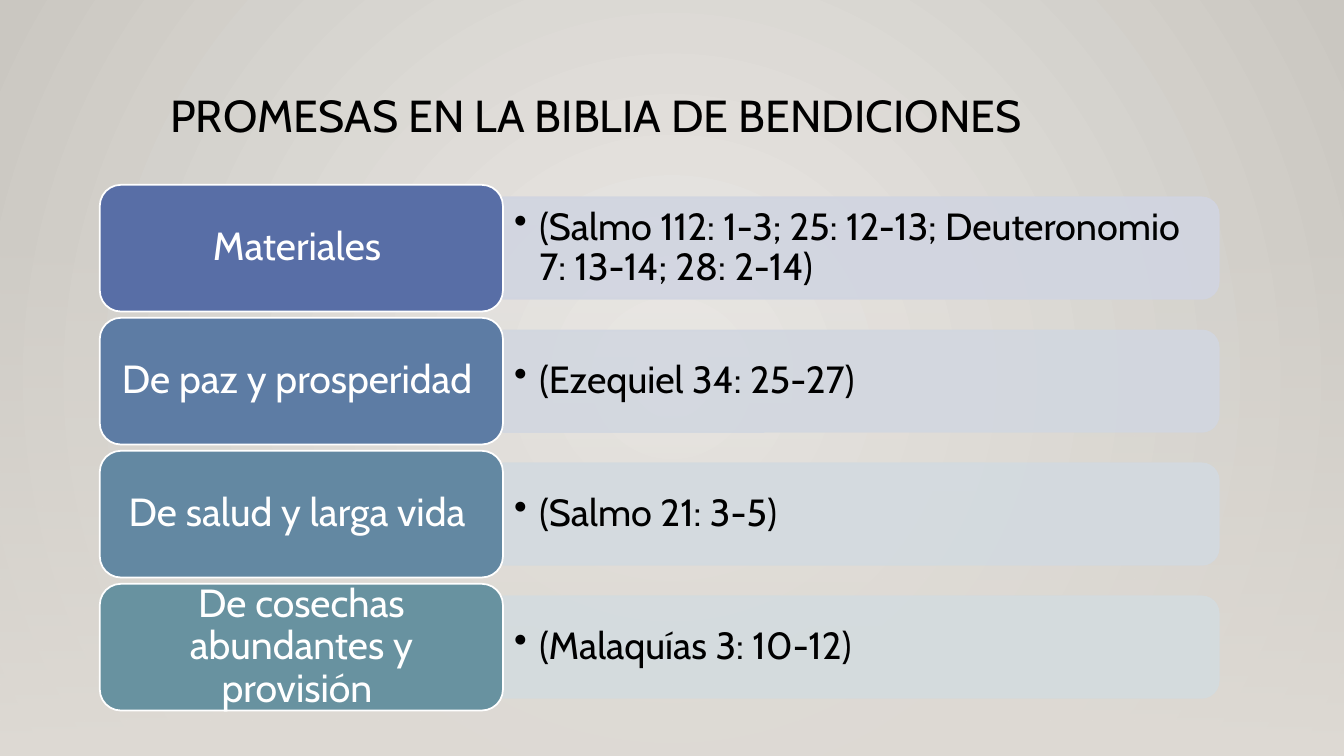
from dataclasses import dataclass

from lxml import etree
from pptx import Presentation
from pptx.dml.color import RGBColor
from pptx.enum.shapes import MSO_SHAPE
from pptx.enum.text import MSO_ANCHOR, MSO_AUTO_SIZE, PP_ALIGN
from pptx.oxml.ns import qn
from pptx.util import Pt

RECT, CARD, BAR = MSO_SHAPE.RECTANGLE, MSO_SHAPE.ROUNDED_RECTANGLE, MSO_SHAPE.ROUND_2_SAME_RECTANGLE
TOP, MIDDLE = MSO_ANCHOR.TOP, MSO_ANCHOR.MIDDLE
LEFT, CENTER = PP_ALIGN.LEFT, PP_ALIGN.CENTER
NO_FIT = MSO_AUTO_SIZE.NONE


@dataclass(frozen=True)
class Theme:
    """Colours, font and sizes of the slide."""
    font: str = "Cabin"
    ink: str = "000000"
    white: str = "FFFFFF"
    glow: str = "ECEAE7"
    edge: str = "CAC7C1"
    floor: str = "DFDBD5"
    title: float = 32
    label: float = 28
    verse: float = 27
    outline: float = 1.25


THEME = Theme()
WIDTH, HEIGHT = 960, 540
PROMISES = [
    ("Materiales ", "(Salmo 112: 1-3; 25: 12-13; Deuteronomio 7: 13-14; 28: 2-14)", "586EA6", "D1D5E1"),
    ("De paz y prosperidad ", "(Ezequiel 34: 25-27)", "5D7CA4", "D2D7E0"),
    ("De salud y larga vida ", "(Salmo 21: 3-5)", "6388A2", "D3DAE0"),
    ("De cosechas abundantes y provisión ", "(Malaquías 3: 10-12)", "6892A0", "D4DCDF"),
]


def apply(obj, **values):
    """Set each named value on the object."""
    for name, value in values.items():
        setattr(obj, name, value)


def set_alpha(color_element, percent):
    """Give a colour element an opacity."""
    etree.SubElement(color_element, qn("a:alpha"), val=str(percent * 1000))


def set_stops(fill, colors):
    """Make a gradient from the given end colours."""
    fill.gradient()
    for stop, color, position in zip(fill.gradient_stops, colors, (0, 1)):
        stop.color.rgb = RGBColor.from_string(color)
        stop.position = position


def add_panel(s, kind, box, fill, line):
    """Add a filled and outlined shape without a shadow."""
    sp = s.shapes.add_shape(kind, *map(Pt, box))
    sp.shadow.inherit = False
    sp.fill.solid()
    sp.fill.fore_color.rgb = RGBColor.from_string(fill)
    sp.line.color.rgb = RGBColor.from_string(line)
    sp.line.width = Pt(THEME.outline)
    return sp


def write(sp, text, size, color, align, anchor, inset, bullet=False):
    """Write one formatted paragraph into a shape."""
    tf = sp.text_frame
    side, end = map(Pt, inset)
    apply(tf, word_wrap=True, auto_size=NO_FIT, vertical_anchor=anchor,
          margin_left=side, margin_right=side, margin_top=end, margin_bottom=end)
    p = tf.paragraphs[0]
    r = p.add_run()
    r.text = text
    if bullet:
        pPr = p._p.get_or_add_pPr()
        pPr.set("marL", str(Pt(18)))
        pPr.set("indent", str(-Pt(18)))
        etree.SubElement(pPr, qn("a:buChar"), char="•")
        p.level = 1
    apply(p, alignment=align, line_spacing=0.9)
    apply(r.font, name=THEME.font, size=Pt(size))
    r.font.color.rgb = RGBColor.from_string(color)


def add_backdrop(s, box):
    """Paint the radial background and the floor that fades in over the box."""
    fill = s.background.fill
    set_stops(fill, (THEME.glow, THEME.edge))
    grad = s.element.find(".//" + qn("a:gradFill"))
    grad.remove(grad.find(qn("a:lin")))
    circle = etree.SubElement(grad, qn("a:path"), path="circle")
    etree.SubElement(circle, qn("a:fillToRect"), l="50000", t="50000", r="50000", b="50000")
    floor = s.shapes.add_shape(RECT, *map(Pt, box))
    floor.shadow.inherit = False
    floor.line.fill.background()
    set_stops(floor.fill, (THEME.floor, THEME.floor))
    floor.fill.gradient_angle = 270
    set_alpha(floor.element.spPr.find(".//" + qn("a:srgbClr")), 0)


def add_title(s, box, text):
    """Place and format the title placeholder."""
    sp = s.shapes.title
    for name, value in zip(("left", "top", "width", "height"), box):
        setattr(sp, name, Pt(value))
    write(sp, text, THEME.title, THEME.ink, LEFT, TOP, (7.2, 3.6))


def add_promise(s, box, label, verse, card_fill, bar_fill):
    """Add a label card and the verse bar to its right."""
    x, y, w, h = box
    card_w, bar_h, pad = 288, 72.5, 3.5
    bar_x, bar_w, middle = x + card_w, w - card_w, y + h / 2
    bar_box = (bar_x + (bar_w - bar_h) / 2, middle - bar_w / 2, bar_h, bar_w)
    bar = add_panel(s, BAR, bar_box, bar_fill, bar_fill)
    bar.rotation = 90
    for color in bar.element.spPr.iter(qn("a:srgbClr")):
        set_alpha(color, 90)
    text_box = (bar_x, middle - bar_h / 2 + pad, bar_w - pad, bar_h - 2 * pad)
    verse_box = s.shapes.add_textbox(*map(Pt, text_box))
    write(verse_box, verse, THEME.verse, THEME.ink, LEFT, MIDDLE, (8, 4), bullet=True)
    card = add_panel(s, CARD, (x, y, card_w, h), card_fill, THEME.white)
    write(card, label, THEME.label, THEME.white, CENTER, MIDDLE, (8.4, 4.2))


def add_promises(s, box, promises):
    """Stack the promise rows evenly in the box."""
    x, y, w, h = box
    gap = 4.5
    row_h = (h - gap * (len(promises) - 1)) / len(promises)
    for i, promise in enumerate(promises):
        add_promise(s, (x, y + i * (row_h + gap), w, row_h), *promise)


def main():
    """Build and save the slide."""
    prs = Presentation()
    apply(prs, slide_width=Pt(WIDTH), slide_height=Pt(HEIGHT))
    s = prs.slides.add_slide(prs.slide_layouts[5])
    add_backdrop(s, (0, 159, WIDTH, HEIGHT - 159))
    add_title(s, (114.5, 63.5, 756, 83), "PROMESAS EN LA BIBLIA DE BENDICIONES")
    add_promises(s, (71.3, 132, 799.2, 375.5), PROMISES)
    prs.save("out.pptx")


if __name__ == "__main__":
    main()
